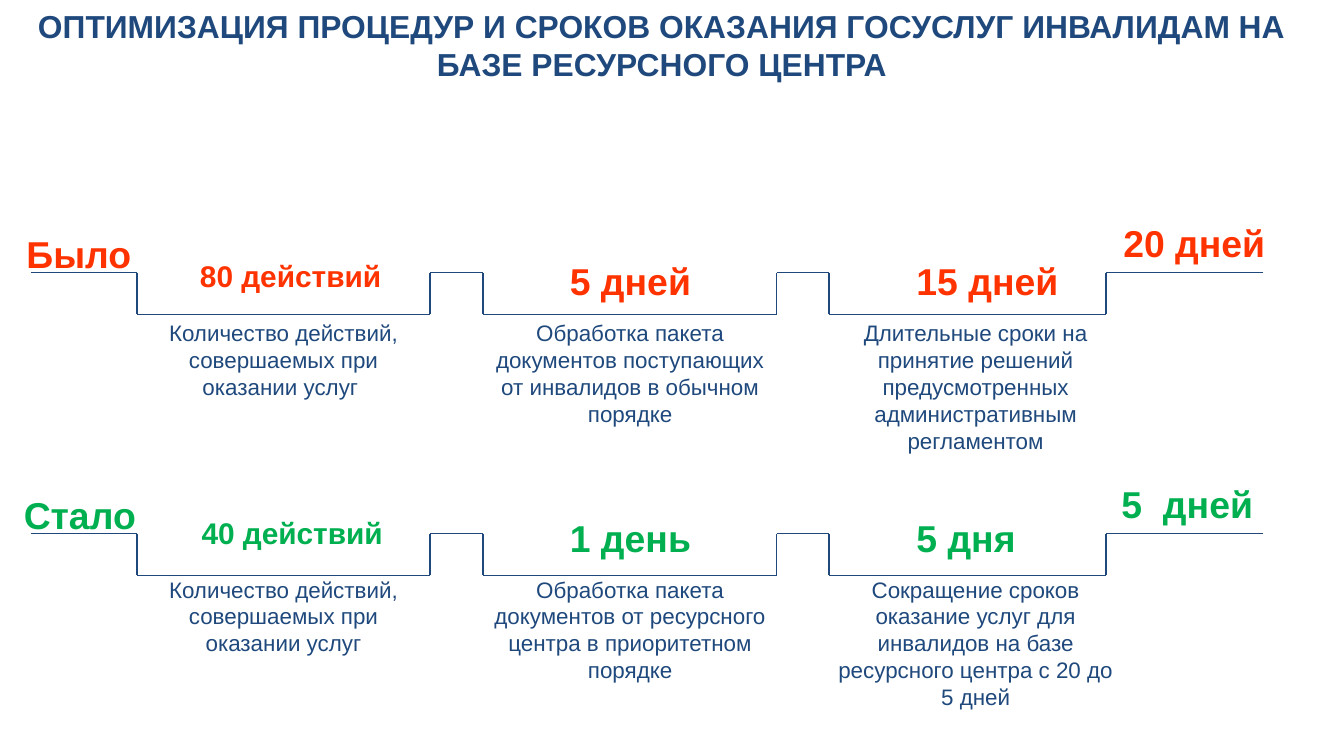
from itertools import pairwise

from lxml import etree
from pptx import Presentation
from pptx.dml.color import RGBColor
from pptx.enum.shapes import MSO_CONNECTOR as Connector
from pptx.enum.text import MSO_ANCHOR as Anchor, MSO_AUTO_SIZE as AutoSize, PP_ALIGN as Align
from pptx.oxml.ns import qn
from pptx.util import Cm, Pt

COLORS = {"navy": "1F497D", "before": "FF3300", "after": "00B050"}
FONT = "Arial"
STEP_DEPTH = 0.79
STEPS = [(2.59, 8.13), (9.13, 14.68), (15.67, 20.9)]
LINE_START, LINE_END = 0.58, 23.87


def format_text(shape, text, size, color, bold=False, align=Align.LEFT, wrap=True):
    frame = shape.text_frame
    frame.text = text
    frame.word_wrap = wrap
    frame.auto_size = AutoSize.NONE
    frame.vertical_anchor = Anchor.TOP
    paragraph = frame.paragraphs[0]
    paragraph.alignment = align
    font = paragraph.runs[0].font
    font.name = FONT
    font.size = Pt(size)
    font.bold = bold
    font.color.rgb = RGBColor.from_string(COLORS[color])


def add_text(slide, box, text, size, color, **options):
    shape = slide.shapes.add_textbox(*(Cm(length) for length in box))
    format_text(shape, text, size, color, **options)


def add_line(slide, start, end):
    line = slide.shapes.add_connector(
        Connector.STRAIGHT, *(Cm(length) for length in (*start, *end)))
    line.line.color.rgb = RGBColor.from_string(COLORS["navy"])
    line.line.width = Pt(0.75)
    etree.SubElement(line._element.spPr, qn("a:effectLst"))


def add_title(slide, left, top, width, height, text):
    title = slide.shapes.title
    title.left, title.top, title.width, title.height = map(Cm, (left, top, width, height))
    format_text(title, text, 17, "navy", bold=True, align=Align.CENTER)


def add_step_line(slide, top):
    points = [(LINE_START, top)]
    for left, right in STEPS:
        bottom = top + STEP_DEPTH
        points += [(left, top), (left, bottom), (right, bottom), (right, top)]
    points.append((LINE_END, top))
    for start, end in pairwise(points):
        add_line(slide, start, end)


def add_process(slide, top, color, text_top, name, total, steps):
    add_step_line(slide, top)
    for text, size, (left, offset, width, height) in (name, total):
        add_text(slide, (left, top + offset, width, height), text, size, color,
                 bold=True, wrap=False)
    for (value, size, left, offset, width, description), text_left in zip(
            steps, (2.39, 8.94, 15.47)):
        add_text(slide, (left, top + offset, width, 1.12), value, size, color,
                 bold=True, wrap=False)
        add_text(slide, (text_left, text_top, 5.94, 2.82), description, 12, "navy",
                 align=Align.CENTER)


def main():
    presentation = Presentation()
    presentation.slide_width, presentation.slide_height = Cm(25.4), Cm(14.28)
    slide = presentation.slides.add_slide(presentation.slide_layouts[5])
    add_title(slide, 0.41, 0, 24.2, 1.7,
              "ОПТИМИЗАЦИЯ ПРОЦЕДУР И СРОКОВ ОКАЗАНИЯ ГОСУСЛУГ ИНВАЛИДАМ НА "
              "БАЗЕ РЕСУРСНОГО ЦЕНТРА")
    add_process(
        slide, 5.15, "before", 5.91,
        ("Было", 20, (0.25, -0.91, 2.51, 1.12)),
        ("20 дней", 20, (20.98, -1.11, 3.23, 1.12)),
        [("80 действий", 16, 3.53, -0.4, 3.99,
          "Количество действий, совершаемых при оказании услуг "),
         ("5 дней", 20, 10.52, -0.4, 2.82,
          "Обработка пакета документов поступающих от инвалидов в обычном порядке"),
         ("15 дней", 20, 17.07, -0.4, 3.23,
          "Длительные сроки на принятие решений предусмотренных "
          "административным регламентом")])
    add_process(
        slide, 10.08, "after", 10.75,
        ("Стало", 20, (0.2, -0.91, 2.64, 1.12)),
        ("\u00205  дней".replace("\u0020", " "), 20, (20.75, -1.11, 3.23, 1.12)),
        [("40 действий", 16, 3.56, -0.48, 3.99,
          "Количество действий, совершаемых при оказании услуг"),
         ("1 день", 20, 10.52, -0.48, 2.82,
          "Обработка пакета документов от ресурсного центра в приоритетном порядке"),
         ("5 дня", 20, 17.07, -0.48, 2.41,
          "Сокращение сроков оказание услуг для инвалидов на базе "
          "ресурсного центра с 20 до 5 дней")])
    presentation.save("out.pptx")


if __name__ == "__main__":
    main()
